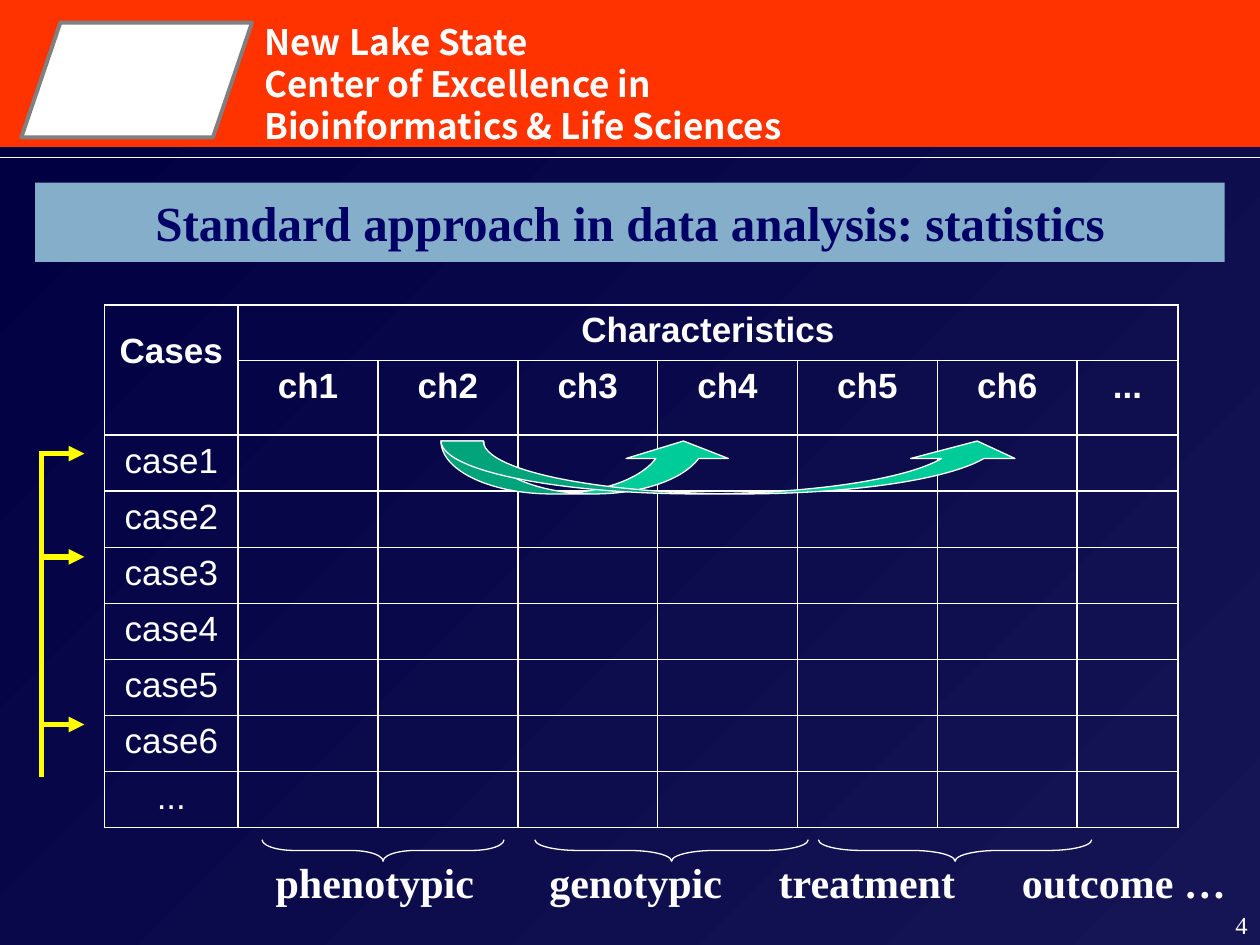
from pptx import Presentation
from pptx.dml.color import RGBColor
from pptx.enum.shapes import MSO_CONNECTOR as Con, MSO_SHAPE as Geo
from pptx.enum.text import MSO_ANCHOR as Anchor, PP_ALIGN as Align
from pptx.oxml import parse_xml
from pptx.oxml.ns import nsdecls, qn
from pptx.oxml.xmlchemy import OxmlElement as Elem
from pptx.util import Inches, Pt

HUES = {
    "red": "FF3300", "night": "000042", "dusk": "151555", "white": "FFFFFF",
    "grey": "808080", "sky": "84AECA", "navy": "000066", "green": "00CC99",
    "yellow": "FFFF00",
}
SERIF, SANS, HEAD = "Times New Roman", "Arial", "Noto Sans CJK KR"


def hue(name):
    return RGBColor.from_string(HUES[name])


def write(frame, text, font=SERIF, size=24, color="white", bold=True,
          align=Align.CENTER, lead=None):
    """Fill a text frame, one paragraph for each line of text."""
    for i, line in enumerate(text.split("\n")):
        para = frame.paragraphs[0] if i == 0 else frame.add_paragraph()
        para.alignment = align
        if lead:
            para.line_spacing = Pt(lead)
        run = para.add_run()
        run.text = line
        run.font.name, run.font.size, run.font.bold = font, Pt(size), bold
        run.font.color.rgb = hue(color)


class Board:
    """Current slide and the style of its elements."""

    def __init__(self, slide):
        self.slide = slide
        self.shapes = slide.shapes

    def back(self, color):
        fill = self.slide.background.fill
        fill.solid()
        fill.fore_color.rgb = hue(color)

    def shape(self, geo, box, fill=None, line=None, width=0.75, adj=(), turn=0):
        item = self.shapes.add_shape(geo, *map(Inches, box))
        item.shadow.inherit = False
        item.rotation = turn
        for i, value in enumerate(adj):
            item.adjustments[i] = value
        if fill:
            item.fill.solid()
            item.fill.fore_color.rgb = hue(fill)
        else:
            item.fill.background()
        if line:
            item.line.color.rgb = hue(line)
            item.line.width = Pt(width)
        else:
            item.line.fill.background()
        return item

    def shade(self, box, start, end):
        fill = self.shape(Geo.RECTANGLE, box).fill
        fill.gradient()
        fill.gradient_angle = 315
        for stop, name, place in zip(fill.gradient_stops, (start, end), (0, 1)):
            stop.color.rgb = hue(name)
            stop.position = place

    def text(self, box, text, wrap=True, **style):
        frame = self.shapes.add_textbox(*map(Inches, box)).text_frame
        frame.word_wrap = wrap
        write(frame, text, **style)

    def line(self, start, end, color, width, arrow=False):
        item = self.shapes.add_connector(Con.STRAIGHT, *map(Inches, start + end))
        item.line.color.rgb = hue(color)
        item.line.width = Pt(width)
        props = item._element.spPr
        if arrow:
            tail = Elem("a:tailEnd")
            tail.set("type", "triangle")
            props.find(qn("a:ln")).append(tail)
        props.append(Elem("a:effectLst"))

    def brace(self, mid, span, bend):
        # A right brace turned to point down, centred on mid
        thick, level = 0.17, 6.75
        box = (mid - thick / 2, level - span / 2, thick, span)
        self.shape(Geo.RIGHT_BRACE, box, line="white", adj=(bend, 0.5), turn=90)

    def grid(self, left, top, cols, rows):
        frame = self.shapes.add_table(
            len(rows), len(cols), Inches(left), Inches(top),
            Inches(sum(cols)), Inches(sum(rows)))
        table = frame.table
        table.first_row = table.horz_banding = False
        for col, size in zip(table.columns, cols):
            col.width = Inches(size)
        for row, size in zip(table.rows, rows):
            row.height = Inches(size)
        for cell in table.iter_cells():
            self.border(cell, "white", 1)
            cell.fill.background()
        return table

    def border(self, cell, color, width):
        props = cell._tc.get_or_add_tcPr()
        for side in "LRTB":
            props.append(parse_xml(
                f'<a:ln{side} {nsdecls("a")} w="{Pt(width)}"><a:solidFill>'
                f'<a:srgbClr val="{HUES[color]}"/></a:solidFill></a:ln{side}>'))


def main():
    deck = Presentation()
    deck.slide_width, deck.slide_height = Inches(10), Inches(7.5)
    board = Board(deck.slides.add_slide(deck.slide_layouts[6]))

    # Banner and backdrop
    board.back("red")
    board.shade((0, 1.17, 10, 6.33), "night", "dusk")
    board.text((2, 0.11, 4.58, 1.1),
               "New Lake State\nCenter of Excellence in Bioinformatics & Life Sciences",
               font=HEAD, size=20, align=Align.LEFT, lead=24)
    board.shape(Geo.PARALLELOGRAM, (0.17, 0.18, 1.83, 0.91), fill="white",
                line="grey", width=2.25, adj=(0.34,))
    board.line((0, 1.25), (10, 1.25), "white", 0.75)

    # Title
    title = board.shape(Geo.RECTANGLE, (0.28, 1.45, 9.44, 0.63), fill="sky")
    title.text_frame.word_wrap = True
    title.text_frame.vertical_anchor = Anchor.MIDDLE
    write(title.text_frame, "Standard approach in data analysis: statistics",
          size=28, color="navy")

    # Table of cases by characteristics
    table = board.grid(0.83, 2.42, [1.06] + [1.11] * 6 + [0.8],
                       [0.44, 0.56] + [0.445] * 7)
    cases, traits = table.cell(0, 0), table.cell(0, 1)
    cases.merge(table.cell(1, 0))
    traits.merge(table.cell(0, 7))
    cases.margin_top = Inches(0.21)
    label = {"font": SANS, "size": 20}
    write(cases.text_frame, "Cases", **label)
    write(traits.text_frame, "Characteristics", **label)
    for i in range(1, 8):
        head, case = (f"ch{i}", f"case{i}") if i < 7 else ("...", "...")
        write(table.cell(1, i).text_frame, head, **label)
        write(table.cell(i + 1, 0).text_frame, case, bold=False, **label)

    # Groups of characteristics
    for left, width, name in ((2.08, 1.79, "phenotypic"), (4.25, 1.59, "genotypic"),
                              (6.07, 1.62, "treatment"), (8, 1.84, "outcome …")):
        board.text((left, 6.75, width, 0.5), name, wrap=False)
    for mid, span, bend in ((3.04, 1.92, 1.5), (5.33, 2.17, 2), (7.58, 2.17, 2)):
        board.brace(mid, span, bend)

    # Links between characteristics
    for width, adj in ((2.33, (0.81, 1.93, 0.33)), (4.67, (0.8, 1.97, 0.33))):
        board.shape(Geo.CURVED_UP_ARROW, (3.5, 3.5, width, 0.42),
                    fill="green", line="white", adj=adj)

    # Links between cases
    board.line((0.33, 3.58), (0.33, 6.17), "yellow", 3)
    for y in (3.6, 4.42, 5.75):
        board.line((0.33, y), (0.67, y), "yellow", 3, arrow=True)

    # Slide number
    board.text((7.92, 7.17, 2.08, 0.33), "4", size=14, bold=False, align=Align.RIGHT)

    deck.save("out.pptx")


if __name__ == "__main__":
    main()
